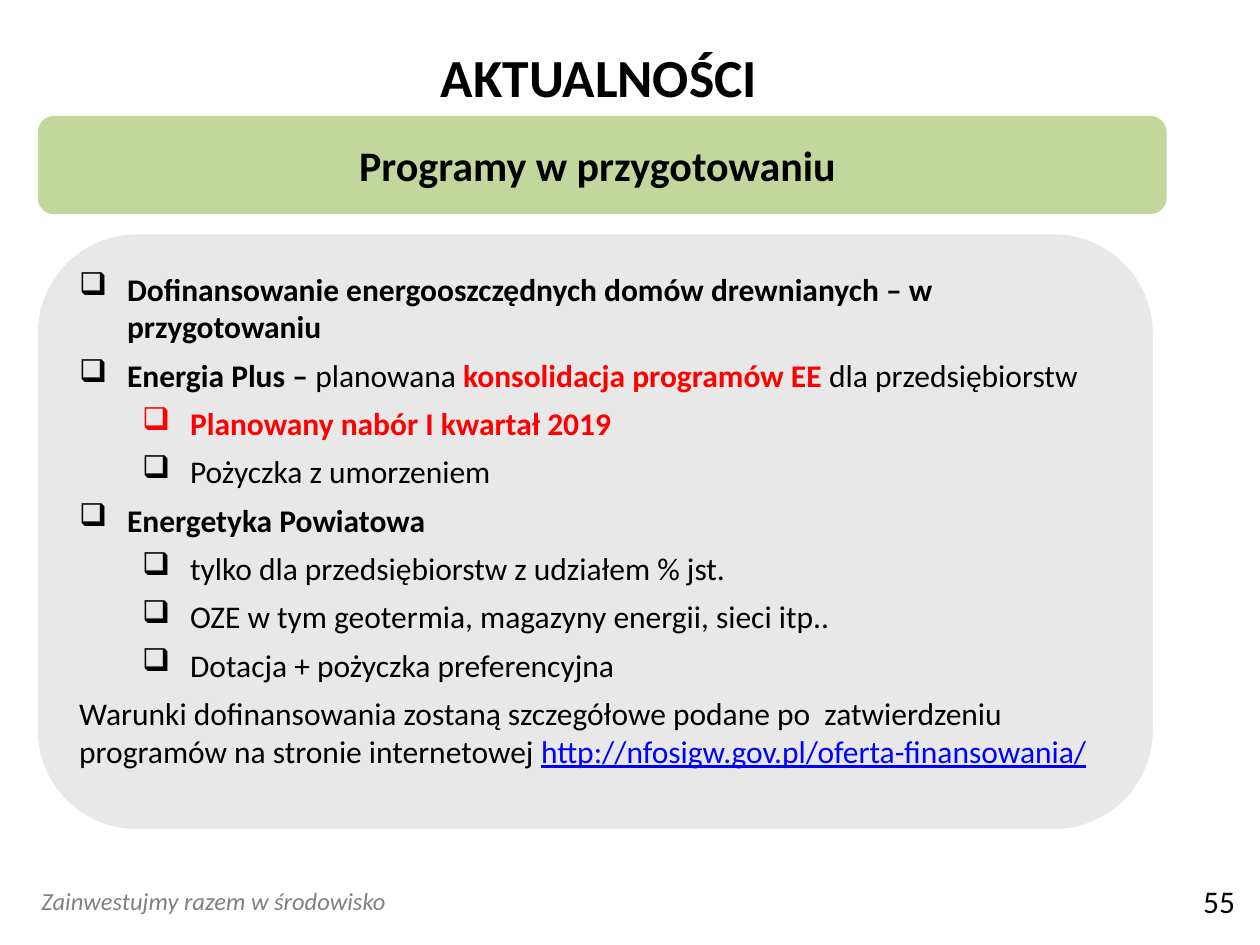
from lxml import etree
from pptx import Presentation
from pptx.dml.color import RGBColor
from pptx.enum.shapes import MSO_SHAPE
from pptx.enum.text import MSO_ANCHOR, PP_ALIGN
from pptx.oxml.ns import qn
from pptx.util import Inches, Pt

ROUNDED = MSO_SHAPE.ROUNDED_RECTANGLE
TOP, MIDDLE = MSO_ANCHOR.TOP, MSO_ANCHOR.MIDDLE
LEFT, CENTER = PP_ALIGN.LEFT, PP_ALIGN.CENTER
COLORS = {"black": "000000", "gray": "808080", "red": "FF0000",
          "blue": "0000FF", "green": "C3D69B", "panel": "D9D9D9"}

# Run formats
PLAIN = {"size": Pt(18)}
BOLD = {"size": Pt(18), "bold": True}
ALERT = {**BOLD, "color": "red"}
ADDRESS = {**PLAIN, "color": "blue", "underline": True}
TITLE = {"size": Pt(30.6), "bold": True}
HEADING = {"size": Pt(24), "bold": True}
MOTTO = {"size": Pt(14), "italic": True, "color": "gray"}

# Each entry: indent of its text (None for no bullet), then its runs
MAIN, SUB = 0.38, 0.88
PROGRAMS = [
    (MAIN, [("Dofinansowanie energooszczędnych domów drewnianych – w przygotowaniu", BOLD)]),
    (MAIN, [("Energia Plus – ", BOLD), ("planowana ", PLAIN),
            ("konsolidacja programów EE ", ALERT), ("dla przedsiębiorstw", PLAIN)]),
    (SUB, [("Planowany nabór I kwartał 2019", ALERT)]),
    (SUB, [("Pożyczka z umorzeniem", PLAIN)]),
    (MAIN, [("Energetyka Powiatowa", BOLD)]),
    (SUB, [("tylko dla przedsiębiorstw z udziałem % jst.", PLAIN)]),
    (SUB, [("OZE w tym geotermia, magazyny energii, sieci itp..", PLAIN)]),
    (SUB, [("Dotacja + pożyczka preferencyjna", PLAIN)]),
    (None, [("Warunki dofinansowania zostaną szczegółowe podane po  zatwierdzeniu "
             "programów na stronie internetowej ", PLAIN),
            ("http://nfosigw.gov.pl/oferta-finansowania/", ADDRESS)]),
]


class Slide:
    font = "Calibri"

    def __init__(self, deck):
        self.page = deck.slides.add_slide(deck.slide_layouts[6])

    def fill_text(self, box, entries, align=LEFT, anchor=TOP):
        frame = box.text_frame
        frame.word_wrap = True
        frame.vertical_anchor = anchor
        for index, (indent, spans) in enumerate(entries):
            para = frame.add_paragraph() if index else frame.paragraphs[0]
            para.alignment = align
            if index:
                para.space_before = Pt(6)
            if indent:
                self.bullet(para, indent)
            for text, style in spans:
                self.span(para, text, style)

    def bullet(self, para, indent):
        props = para._p.get_or_add_pPr()
        props.set("marL", str(Inches(indent)))
        props.set("indent", str(-Inches(MAIN)))
        etree.SubElement(props, qn("a:buChar")).set("char", "❑")

    def span(self, para, text, style):
        span = para.add_run()
        span.text = text
        values = {"name": self.font, **style}
        color = values.pop("color", "black")
        for name, value in values.items():
            setattr(span.font, name, value)
        span.font.color.rgb = RGBColor.from_string(COLORS[color])

    def text(self, place, text, style, **layout):
        box = self.page.shapes.add_textbox(*map(Inches, place))
        self.fill_text(box, [(None, [(text, style)])], **layout)

    def panel(self, place, color, entries, opacity=100, **layout):
        box = self.page.shapes.add_shape(ROUNDED, *map(Inches, place))
        box.shadow.inherit = False
        box.fill.solid()
        box.fill.fore_color.rgb = RGBColor.from_string(COLORS[color])
        box.line.fill.background()
        if opacity < 100:
            shade = box._element.spPr.find(".//" + qn("a:srgbClr"))
            etree.SubElement(shade, qn("a:alpha")).set("val", str(opacity * 1000))
        self.fill_text(box, entries, **layout)


def main():
    deck = Presentation()
    deck.slide_width, deck.slide_height = Inches(10), Inches(7.5)
    slide = Slide(deck)

    # Footer
    slide.text((0.23, 6.98, 4.22, 0.34), "Zainwestujmy razem w środowisko", MOTTO)
    slide.text((9.45, 6.95, 0.55, 0.4), "55", PLAIN)

    # Title and banner
    slide.text((0.59, 0.3, 8.33, 0.61), "AKTUALNOŚCI", TITLE, align=CENTER, anchor=MIDDLE)
    slide.panel((0.3, 0.92, 8.96, 0.78), "green",
                [(None, [("Programy w przygotowaniu ", HEADING)])],
                align=CENTER, anchor=MIDDLE)

    # Program list
    slide.panel((0.3, 1.86, 8.85, 4.72), "panel", PROGRAMS, opacity=59)

    deck.save("out.pptx")


if __name__ == "__main__":
    main()
